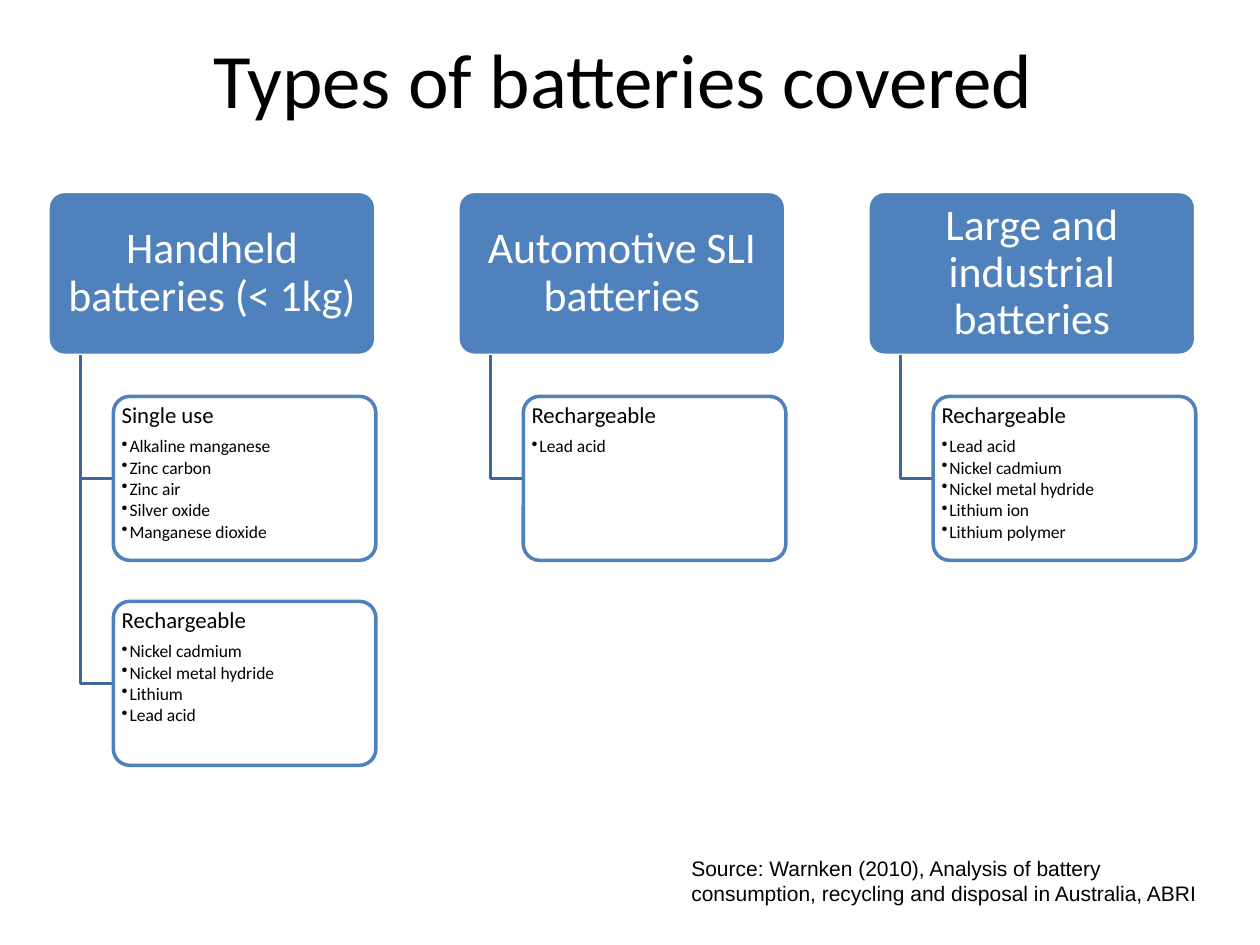
from lxml import etree
from pptx import Presentation
from pptx.dml.color import RGBColor
from pptx.enum.shapes import MSO_SHAPE
from pptx.enum.text import MSO_ANCHOR, PP_ALIGN
from pptx.oxml.ns import qn
from pptx.util import Pt

ROUNDED = MSO_SHAPE.ROUNDED_RECTANGLE
LEFT, CENTER = PP_ALIGN.LEFT, PP_ALIGN.CENTER
TOP, MIDDLE = MSO_ANCHOR.TOP, MSO_ANCHOR.MIDDLE
TITLE_ONLY = 5

COLORS = {"blue": "4F81BD", "branch": "3F6797", "white": "FFFFFF", "black": "000000"}

COLUMN_LEFT, COLUMN_TOP = 27.4, 109.4
COLUMN_WIDTH, BOX_HEIGHT = 187.4, 93.7
COLUMN_PITCH = 1.25 * COLUMN_WIDTH
ROW_PITCH = 1.25 * BOX_HEIGHT
STEM, INDENT = 18.7, 37.4  # branch stem and child box, from the column's left

BATTERY_TYPES = [
    ("Handheld batteries (< 1kg)", [
        ("Single use", ["Alkaline manganese", "Zinc carbon", "Zinc air",
                        "Silver oxide", "Manganese dioxide"]),
        ("Rechargeable", ["Nickel cadmium", "Nickel metal hydride",
                          "Lithium", "Lead acid"]),
    ]),
    ("Automotive SLI batteries", [("Rechargeable", ["Lead acid"])]),
    ("Large and industrial batteries", [
        ("Rechargeable", ["Lead acid", "Nickel cadmium", "Nickel metal hydride",
                          "Lithium ion", "Lithium polymer"]),
    ]),
]


def rgb(name):
    return RGBColor.from_string(COLORS[name])


def set_frame(frame, margin_x, margin_y, anchor=TOP):
    frame.word_wrap = True
    frame.margin_left = frame.margin_right = Pt(margin_x)
    frame.margin_top = frame.margin_bottom = Pt(margin_y)
    frame.vertical_anchor = anchor


def write(frame, text, size, color="black", font="Calibri", align=LEFT,
          spacing=None, after=0, bullet=False):
    """Fill the first paragraph of the frame, or add one if it is taken."""
    paragraph = frame.paragraphs[0]
    if paragraph.runs:
        paragraph = frame.add_paragraph()
    if bullet:
        paragraph.level = 1
        properties = paragraph._p.get_or_add_pPr()
        properties.set("marL", str(Pt(4.5)))
        properties.set("indent", str(Pt(-4.5)))
        etree.SubElement(properties, qn("a:buChar")).set("char", "•")
    paragraph.alignment = align
    paragraph.line_spacing = spacing
    paragraph.space_after = Pt(after)
    run = paragraph.add_run()
    run.text = text
    run.font.name = font
    run.font.size = Pt(size)
    run.font.color.rgb = rgb(color)


def add_box(slide, left, top, width, fill, line):
    box = slide.shapes.add_shape(ROUNDED, Pt(left), Pt(top), Pt(width), Pt(BOX_HEIGHT))
    box.adjustments[0] = 0.1
    box.shadow.inherit = False
    box.fill.solid()
    box.fill.fore_color.rgb = rgb(fill)
    box.line.color.rgb = rgb(line)
    box.line.width = Pt(2)
    return box


def add_branch(slide, left, top, right, bottom):
    builder = slide.shapes.build_freeform(Pt(left), Pt(top))
    builder.add_line_segments([(Pt(left), Pt(bottom)), (Pt(right), Pt(bottom))], close=False)
    branch = builder.convert_to_shape()
    branch.shadow.inherit = False
    branch.fill.background()
    branch.line.color.rgb = rgb("branch")
    branch.line.width = Pt(2)


def add_group(slide, left, top, width, heading, chemistries):
    box = add_box(slide, left, top, width, "white", "blue")
    frame = box.text_frame
    set_frame(frame, 2, 1.3)
    write(frame, heading, 13, spacing=0.9, after=5.5)
    for chemistry in chemistries:
        write(frame, chemistry, 10, spacing=0.9, after=1.4, bullet=True)


def add_column(slide, left, top, width, battery_type, groups):
    header = add_box(slide, left, top, width, "blue", "white")
    set_frame(header.text_frame, 3.75, 2.5, MIDDLE)
    write(header.text_frame, battery_type, 25, "white", align=CENTER, spacing=0.9)
    for row, (heading, chemistries) in enumerate(groups, start=1):
        group_top = top + row * ROW_PITCH
        add_branch(slide, left + STEM, top + BOX_HEIGHT,
                   left + INDENT, group_top + BOX_HEIGHT / 2)
        add_group(slide, left + INDENT, group_top, width - INDENT, heading, chemistries)


def add_title(slide, left, top, width, height):
    title = slide.shapes.title
    title.left, title.top, title.width, title.height = map(Pt, (left, top, width, height))
    set_frame(title.text_frame, 7.2, 3.6)
    write(title.text_frame, "Types of batteries covered", 44, align=CENTER)


def add_source(slide, left, top, width, height):
    source = slide.shapes.add_textbox(Pt(left), Pt(top), Pt(width), Pt(height))
    set_frame(source.text_frame, 7.2, 3.6)
    write(source.text_frame,
          "Source: Warnken (2010), Analysis of battery consumption, "
          "recycling and disposal in Australia, ABRI", 12, font="Arial")


def main():
    deck = Presentation()
    deck.slide_width, deck.slide_height = Pt(720), Pt(540)
    slide = deck.slides.add_slide(deck.slide_layouts[TITLE_ONLY])

    # Title
    add_title(slide, 27.4, 14.4, 657.4, 54)

    # One column for each battery type
    for index, (battery_type, groups) in enumerate(BATTERY_TYPES):
        add_column(slide, COLUMN_LEFT + index * COLUMN_PITCH, COLUMN_TOP,
                   COLUMN_WIDTH, battery_type, groups)

    # Source note
    add_source(slide, 388, 485.3, 311.8, 36)

    deck.save("out.pptx")


if __name__ == "__main__":
    main()
